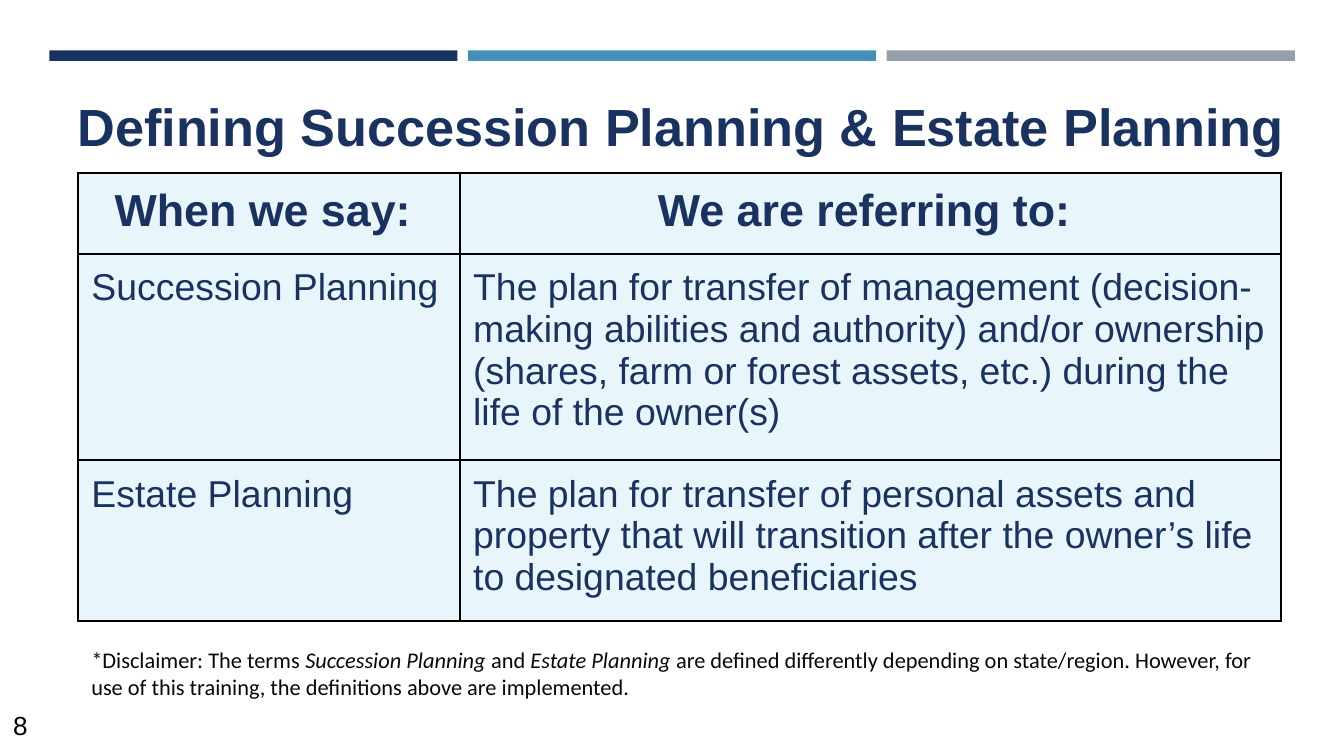
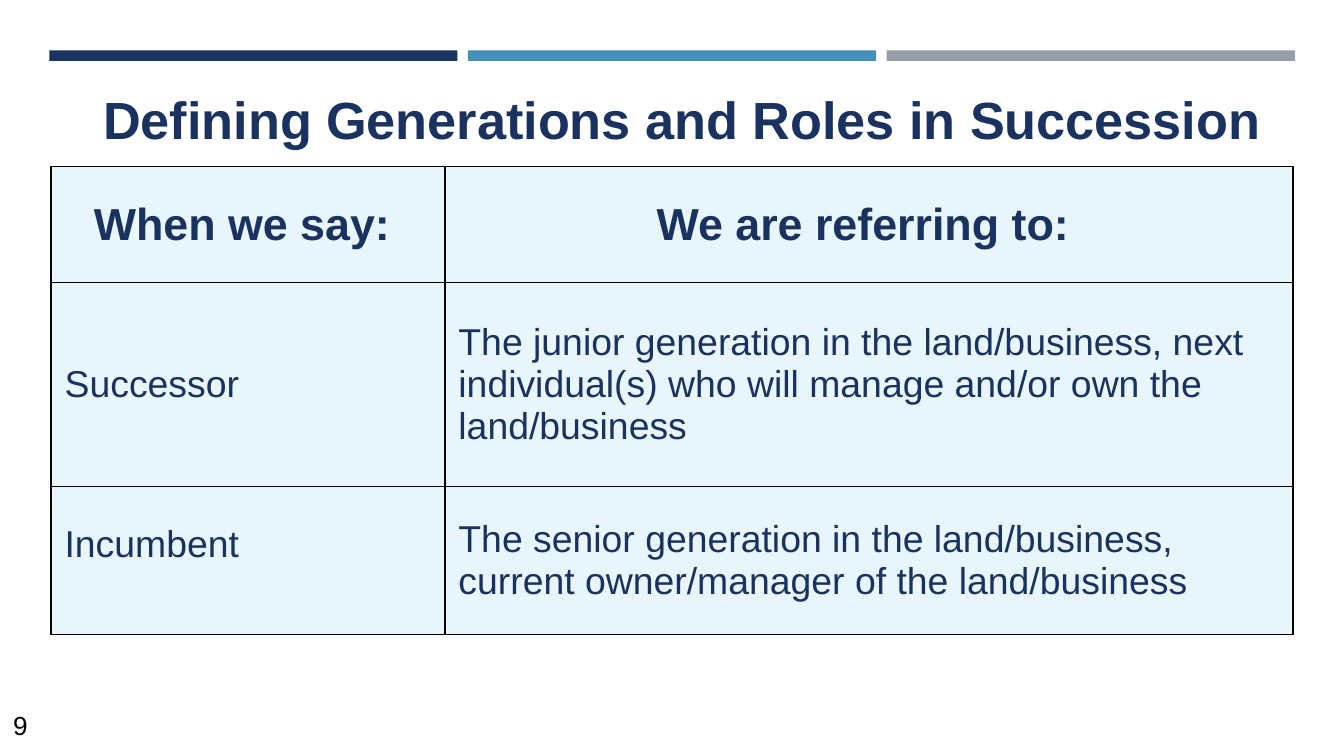
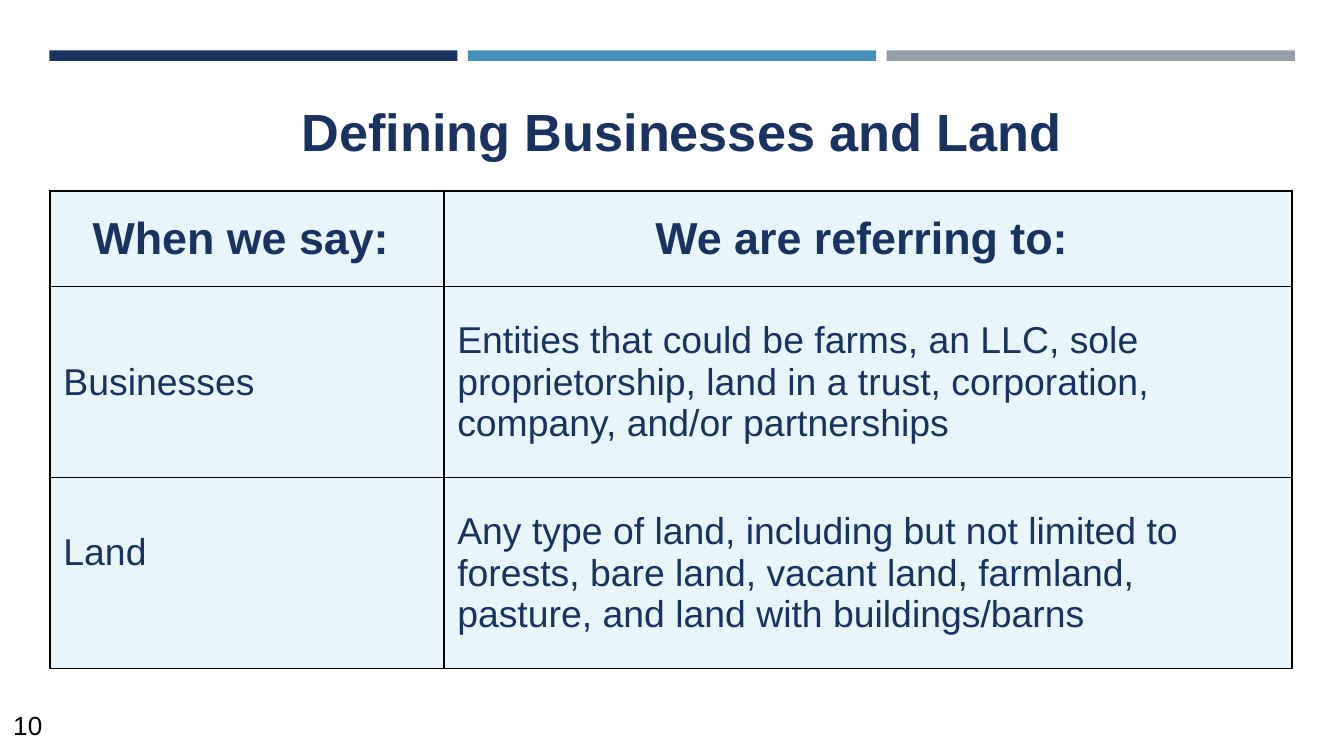
from lxml import etree
from pptx import Presentation
from pptx.dml.color import RGBColor
from pptx.enum.shapes import MSO_SHAPE
from pptx.enum.text import MSO_ANCHOR as Anchor, MSO_AUTO_SIZE as AutoSize, PP_ALIGN as Align
from pptx.oxml import parse_xml
from pptx.oxml.ns import nsdecls
from pptx.util import Pt

NAVY, BLUE, GREY = "1A3260", "4590B8", "969FA7"
PALE, BLACK, NOTE_INK = "E8F6FB", "000000", "080808"
INSET = 7.2
HEADINGS = ("When we say: ", "We are referring to: ")


def rgb(hex_code):
    return RGBColor.from_string(hex_code)


def style_text(frame, size, color, font="Arial", bold=False, align=Align.LEFT):
    for paragraph in frame.paragraphs:
        paragraph.alignment = align
        for run in paragraph.runs:
            run.font.name, run.font.size, run.font.bold = font, Pt(size), bold
            run.font.color.rgb = rgb(color)


# Content: places are left, top, width (and height) in points
definitions = [
    {
        "page": 8,
        "title": "Defining Succession Planning & Estate Planning",
        "title_at": (22.3, 38.2, 674.6), "title_align": Align.LEFT,
        "table_at": (41.8, 92.7), "columns": (204.5, 439.9),
        "rows": (41.3, 103.4, 81.4), "anchor": Anchor.TOP, "last_term_lift": 0,
        "terms": [
            ("Succession Planning",
             "The plan for transfer of management (decision-making abilities and authority) "
             "and/or ownership (shares, farm or forest assets, etc.) during the life of the owner(s)"),
            ("Estate Planning",
             "The plan for transfer of personal assets and property that will transition "
             "after the owner’s life to designated beneficiaries"),
        ],
    },
    {
        "page": 9,
        "title": "Defining Generations and Roles in Succession",
        "title_at": (25.9, 34.6, 666.7), "title_align": Align.CENTER,
        "table_at": (27.4, 89.3), "columns": (211, 454.3),
        "rows": (62, 109.4, 79.2), "anchor": Anchor.MIDDLE, "last_term_lift": 17,
        "terms": [
            ("Successor",
             "The junior generation in the land/business, next individual(s) who will "
             "manage and/or own the land/business"),
            ("Incumbent",
             "The senior generation in the land/business, current owner/manager of the land/business"),
        ],
    },
    {
        "page": 10,
        "title": "Defining Businesses and Land",
        "title_at": (26.6, 41, 665.3), "title_align": Align.CENTER,
        "table_at": (26.8, 102.2), "columns": (211, 454.3),
        "rows": (51.3, 102.4, 102.4), "anchor": Anchor.MIDDLE, "last_term_lift": 22,
        "terms": [
            ("Businesses",
             "Entities that could be farms, an LLC, sole proprietorship, land in a trust, "
             "corporation, company, and/or partnerships"),
            ("Land",
             "Any type of land, including but not limited to forests, bare land, vacant land, "
             "farmland, pasture, and land with buildings/barns"),
        ],
    },
]
disclaimer_parts = [
    ("*Disclaimer: The terms ", False),
    ("Succession Planning ", True),
    ("and", False),
    (" Estate Planning ", True),
    ("are defined differently depending on state/region. However, for use of this "
     "training, the definitions above are implemented.", False),
]

deck = Presentation()
deck.slide_width, deck.slide_height = Pt(720), Pt(405)

for definition in definitions:
    slide = deck.slides.add_slide(deck.slide_layouts[5])

    # Three bands along the top
    for i, color in enumerate((NAVY, BLUE, GREY)):
        band = slide.shapes.add_shape(
            MSO_SHAPE.RECTANGLE, Pt(26.4 + 224.3 * i), Pt(27), Pt(218.7), Pt(5.6))
        band.shadow.inherit = False
        band.fill.solid()
        band.fill.fore_color.rgb = rgb(color)
        band.line.fill.background()

    # Page number
    page = slide.shapes.add_textbox(Pt(0), Pt(376.6), Pt(37.4), Pt(27.4)).text_frame
    page.word_wrap = True
    page.text = str(definition["page"])
    style_text(page, 14, BLACK)

    # Title
    title = slide.shapes.title
    left, top, width = definition["title_at"]
    title.left, title.top, title.width, title.height = Pt(left), Pt(top), Pt(width), Pt(54.7)
    heading = title.text_frame
    heading.text = definition["title"]
    heading.word_wrap, heading.auto_size = True, AutoSize.NONE
    heading.vertical_anchor = Anchor.TOP
    heading.margin_left = heading.margin_right = Pt(INSET)
    heading.margin_top = heading.margin_bottom = Pt(INSET)
    style_text(heading, 28, NAVY, bold=True, align=definition["title_align"])
    heading.paragraphs[0].line_spacing = 1.15
    indent = heading.paragraphs[0]._p.get_or_add_pPr()
    indent.set("marL", str(int(Pt(12))))
    indent.set("indent", "0")

    # Table of terms
    left, top = definition["table_at"]
    columns, rows = definition["columns"], definition["rows"]
    terms = slide.shapes.add_table(
        len(rows), len(columns), Pt(left), Pt(top), Pt(sum(columns)), Pt(sum(rows))).table
    terms.first_row = terms.horz_banding = False
    for column, width in zip(terms.columns, columns):
        column.width = Pt(width)
    for row, height in zip(terms.rows, rows):
        row.height = Pt(height)

    for r, texts in enumerate([HEADINGS, *definition["terms"]]):
        for c, text in enumerate(texts):
            cell = terms.cell(r, c)
            cell.text = text
            cell.vertical_anchor = definition["anchor"]
            cell.margin_left = cell.margin_right = Pt(INSET)
            cell.margin_top = cell.margin_bottom = Pt(INSET)
            cell.fill.solid()
            cell.fill.fore_color.rgb = rgb(PALE)
            if r == 0:
                style_text(cell.text_frame, 24, NAVY, bold=True, align=Align.CENTER)
            else:
                style_text(cell.text_frame, 20, NAVY)
            # Borders come before the fill in the cell properties
            for position, side in enumerate("LRTB"):
                border = parse_xml(f'<a:ln{side} {nsdecls("a")} w="{int(Pt(1))}"/>')
                ink = etree.SubElement(border, f"{{{border.nsmap['a']}}}solidFill")
                etree.SubElement(ink, f"{{{border.nsmap['a']}}}srgbClr", val=BLACK)
                cell._tc.get_or_add_tcPr().insert(position, border)

    # The last term sits a little above the middle of its cell
    terms.cell(len(rows) - 1, 0).margin_bottom = Pt(INSET + definition["last_term_lift"])

# Disclaimer under the first table
disclaimer = deck.slides[0].shapes.add_textbox(
    Pt(41.8), Pt(339.1), Pt(644.4), Pt(33.8)).text_frame
disclaimer.word_wrap = True
disclaimer.margin_left = disclaimer.margin_right = Pt(INSET)
disclaimer.margin_top = disclaimer.margin_bottom = Pt(INSET)
for text, italic in disclaimer_parts:
    part = disclaimer.paragraphs[0].add_run()
    part.text = text
    part.font.italic = italic
style_text(disclaimer, 12, NOTE_INK, font="Calibri")

deck.save("out.pptx")
